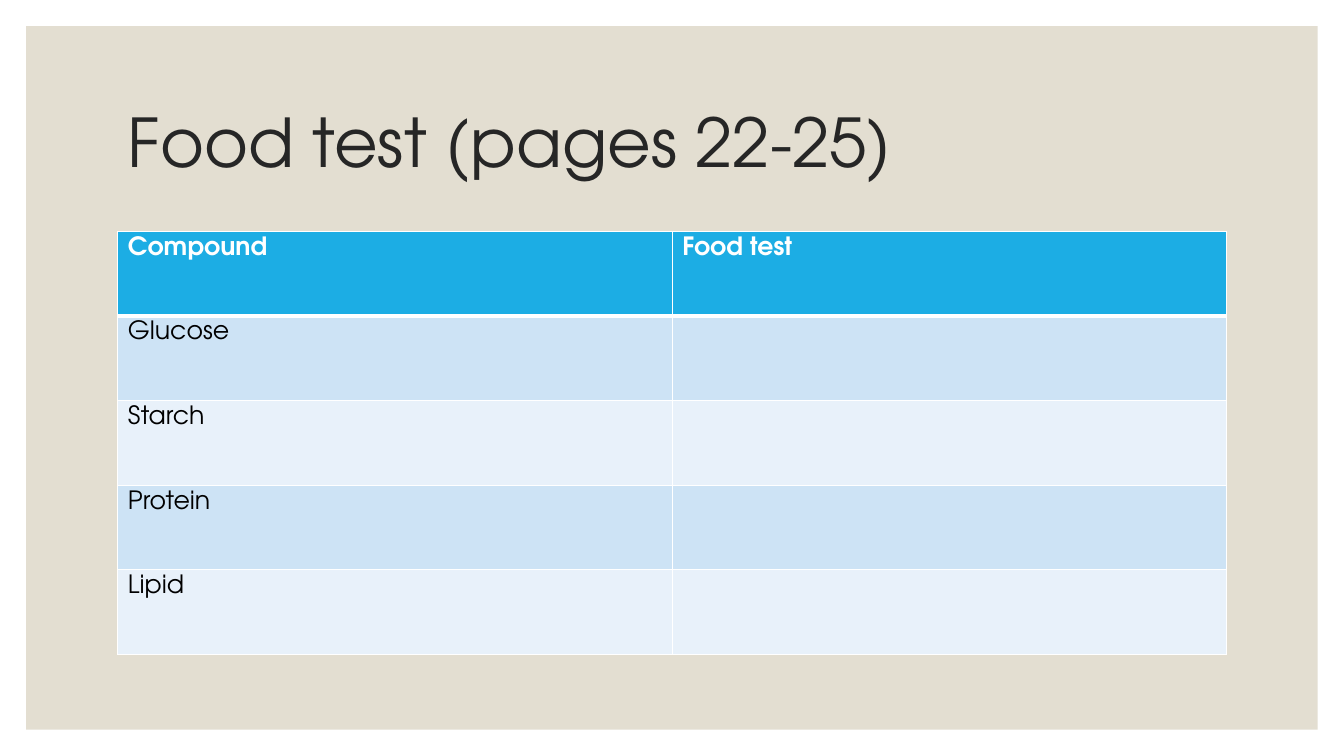
"""Build a slide with a table of food tests to fill in."""
from dataclasses import dataclass

from lxml.etree import SubElement
from pptx import Presentation
from pptx.dml.color import RGBColor
from pptx.enum.shapes import MSO_SHAPE
from pptx.enum.text import MSO_ANCHOR
from pptx.oxml.ns import qn
from pptx.slide import Slide
from pptx.table import _Cell
from pptx.text.text import _Paragraph
from pptx.util import Cm, Pt

FONT = "TeX Gyre Adventor"
WHITE = RGBColor(0xFF, 0xFF, 0xFF)
BLACK = RGBColor(0x00, 0x00, 0x00)
CHARCOAL = RGBColor(0x26, 0x26, 0x26)
SAND = RGBColor(0xE3, 0xDE, 0xD1)
BLUE = RGBColor(0x1C, 0xAD, 0xE4)
LIGHT_BLUE = RGBColor(0xCD, 0xE3, 0xF5)
PALE_BLUE = RGBColor(0xE8, 0xF1, 0xFA)

SLIDE_WIDTH, SLIDE_HEIGHT = Cm(33.87), Cm(19.05)
MARGIN = Cm(0.66)
CONTENT_LEFT, CONTENT_WIDTH = Cm(2.97), Cm(27.94)
ROW_HEIGHT = Cm(2.13)
THIN, THICK = Pt(1), Pt(3)


@dataclass(frozen=True)
class TestRow:
    compound: str
    food_test: str
    fill: RGBColor
    color: RGBColor = BLACK
    bold: bool = False
    top: int = THIN
    bottom: int = THIN


TEST_ROWS = [
    TestRow("Compound", "Food test", BLUE, WHITE, bold=True, bottom=THICK),
    TestRow("Glucose", "", LIGHT_BLUE, top=THICK),
    TestRow("Starch", "", PALE_BLUE),
    TestRow("Protein", "", LIGHT_BLUE),
    TestRow("Lipid", "", PALE_BLUE),
]


def add_text(paragraph: _Paragraph, text: str, size: int, color: RGBColor, bold: bool = False) -> None:
    run = paragraph.add_run()
    run.text = text
    run.font.name = FONT
    run.font.size = Pt(size)
    run.font.bold = bold
    run.font.color.rgb = color


def add_background(slide: Slide) -> None:
    panel = slide.shapes.add_shape(
        MSO_SHAPE.RECTANGLE, MARGIN, MARGIN,
        SLIDE_WIDTH - 2 * MARGIN, SLIDE_HEIGHT - 2 * MARGIN,
    )
    panel.shadow.inherit = False
    panel.fill.solid()
    panel.fill.fore_color.rgb = SAND
    panel.line.fill.background()


def add_title(slide: Slide, text: str) -> None:
    title = slide.shapes.add_textbox(CONTENT_LEFT, Cm(1.78), CONTENT_WIDTH, Cm(3.81))
    frame = title.text_frame
    frame.word_wrap = True
    frame.vertical_anchor = MSO_ANCHOR.MIDDLE
    frame.paragraphs[0].line_spacing = 0.9
    add_text(frame.paragraphs[0], text, 48, CHARCOAL)


def set_borders(cell: _Cell, top: int, bottom: int) -> None:
    properties = cell._tc.get_or_add_tcPr()
    for side, width in (("L", THIN), ("R", THIN), ("T", top), ("B", bottom)):
        border = SubElement(properties, qn(f"a:ln{side}"), w=str(width))
        fill = SubElement(border, qn("a:solidFill"))
        SubElement(fill, qn("a:srgbClr"), val=str(WHITE))


def fill_cell(cell: _Cell, text: str, row: TestRow) -> None:
    set_borders(cell, row.top, row.bottom)
    cell.fill.solid()
    cell.fill.fore_color.rgb = row.fill
    if text:
        add_text(cell.text_frame.paragraphs[0], text, 18, row.color, row.bold)


def add_test_table(slide: Slide, rows: list[TestRow]) -> None:
    table = slide.shapes.add_table(
        len(rows), 2, CONTENT_LEFT, Cm(5.84), CONTENT_WIDTH, ROW_HEIGHT * len(rows)
    ).table
    for table_row, row in zip(table.rows, rows):
        table_row.height = ROW_HEIGHT
        for cell, text in zip(table_row.cells, (row.compound, row.food_test)):
            fill_cell(cell, text, row)


def main() -> None:
    presentation = Presentation()
    presentation.slide_width = SLIDE_WIDTH
    presentation.slide_height = SLIDE_HEIGHT
    slide = presentation.slides.add_slide(presentation.slide_layouts[6])
    add_background(slide)
    add_title(slide, "Food test (pages 22-25)")
    add_test_table(slide, TEST_ROWS)
    presentation.save("out.pptx")


if __name__ == "__main__":
    main()
